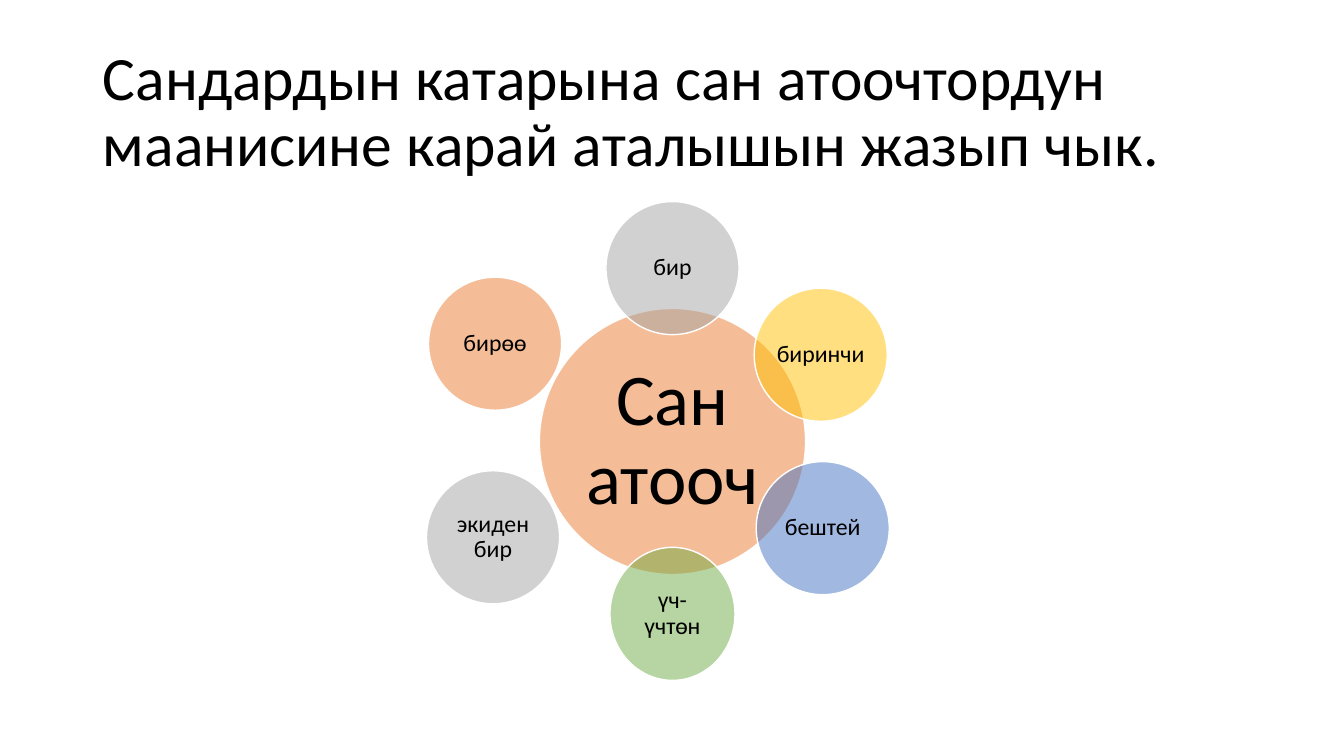
from dataclasses import dataclass

from lxml import etree
from pptx import Presentation
from pptx import util as u
from pptx.dml.color import RGBColor
from pptx.enum import shapes, text
from pptx.oxml import ns


@dataclass(frozen=True)
class Theme:
    font: str = "Calibri"
    ink: str = "000000"
    edge: str = "FFFFFF"
    orange: str = "ED7D31"
    gray: str = "A5A5A5"
    gold: str = "FFC000"
    blue: str = "4472C4"
    green: str = "70AD47"
    alpha: int = 50
    head: int = 44
    hub: int = 52
    node: int = 17


T = Theme()

# Word, colour, width, and offset of the centre from the hub
NODES = [
    ("бир", T.gray, 1.32, 0, -1.72),
    ("биринчи", T.gold, 1.32, 1.47, -0.86),
    ("бештей", T.blue, 1.32, 1.49, 0.86),
    ("үч-үчтөн", T.green, 1.24, 0, 1.71),
    ("бирөө", T.orange, 1.32, -1.76, -0.97),
    ("экиден бир", T.gray, 1.32, -1.78, 0.95),
]
NODE_H = 1.32
HUB = 2.64


def apply(item, form):
    for key, val in form.items():
        setattr(item, key, val)


def write(frame, words, size, align, pad):
    inset = u.Inches(pad)
    apply(frame, dict(
        text=words, word_wrap=True, auto_size=text.MSO_AUTO_SIZE.NONE,
        vertical_anchor=text.MSO_ANCHOR.MIDDLE,
        margin_left=inset, margin_right=inset,
        margin_top=inset, margin_bottom=inset))
    para = frame.paragraphs[0]
    apply(para, dict(alignment=align, line_spacing=0.9))
    font = para.runs[0].font
    apply(font, dict(name=T.font, size=u.Pt(size)))
    font.color.rgb = RGBColor.from_string(T.ink)


def circle(group, mid, size, words, color, points, pad):
    (x, y), (w, h) = mid, size
    box = [u.Inches(v) for v in (x - w / 2, y - h / 2, w, h)]
    disc = group.shapes.add_shape(shapes.MSO_SHAPE.OVAL, *box)
    disc.shadow.inherit = False
    disc.fill.solid()
    disc.fill.fore_color.rgb = RGBColor.from_string(color)
    tint = disc.element.spPr.find(".//" + ns.qn("a:srgbClr"))
    etree.SubElement(tint, ns.qn("a:alpha"), val=str(T.alpha * 1000))
    disc.line.color.rgb = RGBColor.from_string(T.edge)
    disc.line.width = u.Pt(1)
    write(disc.text_frame, words, points, text.PP_ALIGN.CENTER, pad)


def heading(slide, box, words):
    title = slide.shapes.title
    names = ("left", "top", "width", "height")
    apply(title, dict(zip(names, map(u.Inches, box))))
    write(title.text_frame, words, T.head, text.PP_ALIGN.LEFT, 0.1)


def cluster(slide, box):
    left, top, width, height = box
    x, y = left + width / 2, top + height / 2
    group = slide.shapes.add_group_shape()
    # Hub first, so that the nodes overlap it
    circle(group, (x, y), (HUB, HUB), "Сан атооч", T.orange, T.hub, 0.07)
    for words, color, w, dx, dy in NODES:
        circle(group, (x + dx, y + dy), (w, NODE_H), words, color,
               T.node, 0.02)


def main():
    deck = Presentation()
    deck.slide_width, deck.slide_height = u.Inches(13.33), u.Inches(7.5)
    slide = deck.slides.add_slide(deck.slide_layouts[5])
    heading(slide, (0.92, 0.4, 11.5, 1.45),
            "Сандардын катарына сан атоочтордун "
            "маанисине карай аталышын жазып чык.")
    cluster(slide, (4.23, 2, 4.88, 4.76))
    deck.save("out.pptx")


if __name__ == "__main__":
    main()
